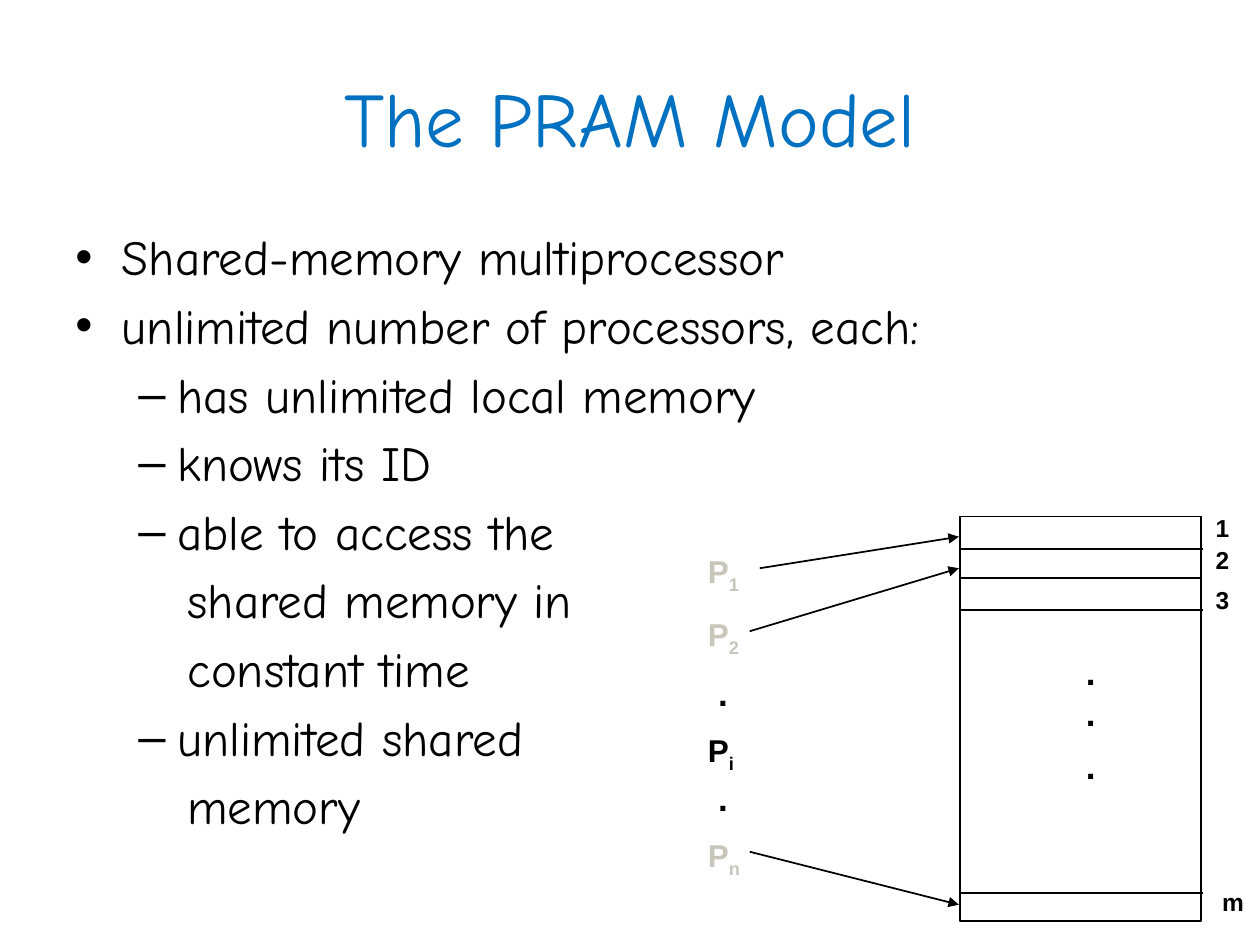
from lxml.etree import SubElement
from pptx import Presentation
from pptx.dml.color import RGBColor
from pptx.enum.shapes import MSO_CONNECTOR as Connector, MSO_SHAPE as Shape
from pptx.enum.text import MSO_ANCHOR as Anchor, MSO_AUTO_SIZE as AutoSize, PP_ALIGN as Align
from pptx.oxml.ns import qn
from pptx.util import Inches, Pt

BLACK = RGBColor(0x00, 0x00, 0x00)
WHITE = RGBColor(0xFF, 0xFF, 0xFF)
BLUE = RGBColor(0x00, 0x70, 0xC0)
PALE = RGBColor(0xC8, 0xC6, 0xBA)

BULLET_STYLES = {
    "main": (0.37, -0.37, "•"),
    "sub": (0.81, -0.31, "–"),
    "continued": (0.89, 0, None),
}
BODY = [
    ("main", "Shared-memory multiprocessor"),
    ("main", "unlimited number of processors, each:"),
    ("sub", "has unlimited local memory"),
    ("sub", "knows its ID"),
    ("sub", "able to access the"),
    ("continued", "shared memory in"),
    ("continued", "constant time"),
    ("sub", "unlimited shared"),
    ("continued", "memory"),
]
MEMORY_LEFT = 7.61
CELL_BORDERS = [(4.36, 9.55), (4.59, 9.53), (4.84, 9.55), (7.09, 9.55)]
CELL_LABELS = [("1", 9.55, 4.05), ("2", 9.55, 4.3), ("3", 9.55, 4.62), ("m", 9.6, 7.02)]
PROCESSORS = [("1", 4.34, PALE), ("2", 4.84, PALE), ("i", 5.76, BLACK), ("n", 6.59, PALE)]
ACCESSES = [(6.03, 4.51, 4.26), (5.95, 5.01, 4.51), (5.95, 6.76, 7.18)]
DOTS = [(8.52, 5.15), (8.52, 5.48), (8.52, 5.9), (5.6, 5.32), (5.6, 6.15)]


def set_font(paragraph, name, size, color, bold=False):
    """Set the font of a whole paragraph."""
    font = paragraph.font
    font.name, font.size, font.bold = name, Pt(size), bold
    font.color.rgb = color


def add_frame(slide, left, top, width, height):
    """Add a wrapping text box and return its text frame."""
    frame = slide.shapes.add_textbox(*map(Inches, (left, top, width, height))).text_frame
    frame.word_wrap = True
    return frame


def add_title(slide, text):
    """Add the centred slide title."""
    frame = add_frame(slide, 0.5, 0.3, 9, 1.25)
    frame.vertical_anchor = Anchor.MIDDLE
    heading = frame.paragraphs[0]
    heading.text = text
    heading.alignment = Align.CENTER
    set_font(heading, "Comic Neue", 44, BLUE)


def add_body(slide):
    """Add the two-level bullet list."""
    frame = add_frame(slide, 0.5, 1.75, 9, 4.95)
    for index, (style, text) in enumerate(BODY):
        item = frame.add_paragraph() if index else frame.paragraphs[0]
        item.text = text
        item.space_before = Pt(5.6)
        margin, indent, mark = BULLET_STYLES[style]
        properties = item._p.get_or_add_pPr()
        properties.set("marL", str(Inches(margin)))
        properties.set("indent", str(Inches(indent)))
        if mark:
            SubElement(properties, qn("a:buFont"), typeface="Arial")
            SubElement(properties, qn("a:buChar"), char=mark)
        set_font(item, "Comic Neue", 28, BLACK)


def add_label(slide, text, box, size, color=BLACK, subscript=None, wrap=False):
    """Add a bold diagram label with an optional subscript."""
    frame = add_frame(slide, *box)
    frame.word_wrap = wrap
    frame.auto_size = AutoSize.SHAPE_TO_FIT_TEXT
    label = frame.paragraphs[0]
    label.line_spacing = 0.9
    label.add_run().text = text
    if subscript:
        lowered = label.add_run()
        lowered.text = subscript
        lowered.font._element.set("baseline", "-25000")
    set_font(label, "Arial", size, color, bold=True)


def add_line(slide, start, end, arrow=False):
    """Add a thin black line, with an arrowhead at its end if asked."""
    line = slide.shapes.add_connector(Connector.STRAIGHT, *map(Inches, start + end))
    line.line.color.rgb = BLACK
    line.line.width = Pt(1)
    if arrow:
        SubElement(line.line._get_or_add_ln(), qn("a:tailEnd"), type="triangle")
    SubElement(line._element.spPr, qn("a:effectLst"))


def add_memory(slide):
    """Add the shared memory block with its cells and labels."""
    memory = slide.shapes.add_shape(Shape.RECTANGLE, *map(Inches, (7.62, 4.1, 1.91, 3.21)))
    memory.shadow.inherit = False
    memory.fill.solid()
    memory.fill.fore_color.rgb = WHITE
    memory.line.color.rgb = BLACK
    memory.line.width = Pt(1)
    for y, right in CELL_BORDERS:
        add_line(slide, (MEMORY_LEFT, y), (right, y))
    for text, left, top in CELL_LABELS:
        add_label(slide, text, (left, top, 0.38 if text == "m" else 0.31, 0.31), 14)


def add_processors(slide):
    """Add the processors, their memory accesses and the ellipsis dots."""
    for name, top, color in PROCESSORS:
        width = 0.41 if name == "i" else 0.46
        add_label(slide, "P", (5.52, top, width, 0.37), 18, color, subscript=name)
    for left, start_y, end_y in ACCESSES:
        add_line(slide, (left, start_y), (MEMORY_LEFT, end_y), arrow=True)
    for left, top in DOTS:
        add_label(slide, ".", (left, top, 0.35, 0.4), 20, wrap=True)


def main():
    """Build and save the slide."""
    deck = Presentation()
    deck.slide_width, deck.slide_height = Inches(10), Inches(7.5)
    slide = deck.slides.add_slide(deck.slide_layouts[6])
    add_title(slide, "The PRAM Model")
    add_body(slide)
    add_memory(slide)
    add_processors(slide)
    deck.save("out.pptx")


if __name__ == "__main__":
    main()
